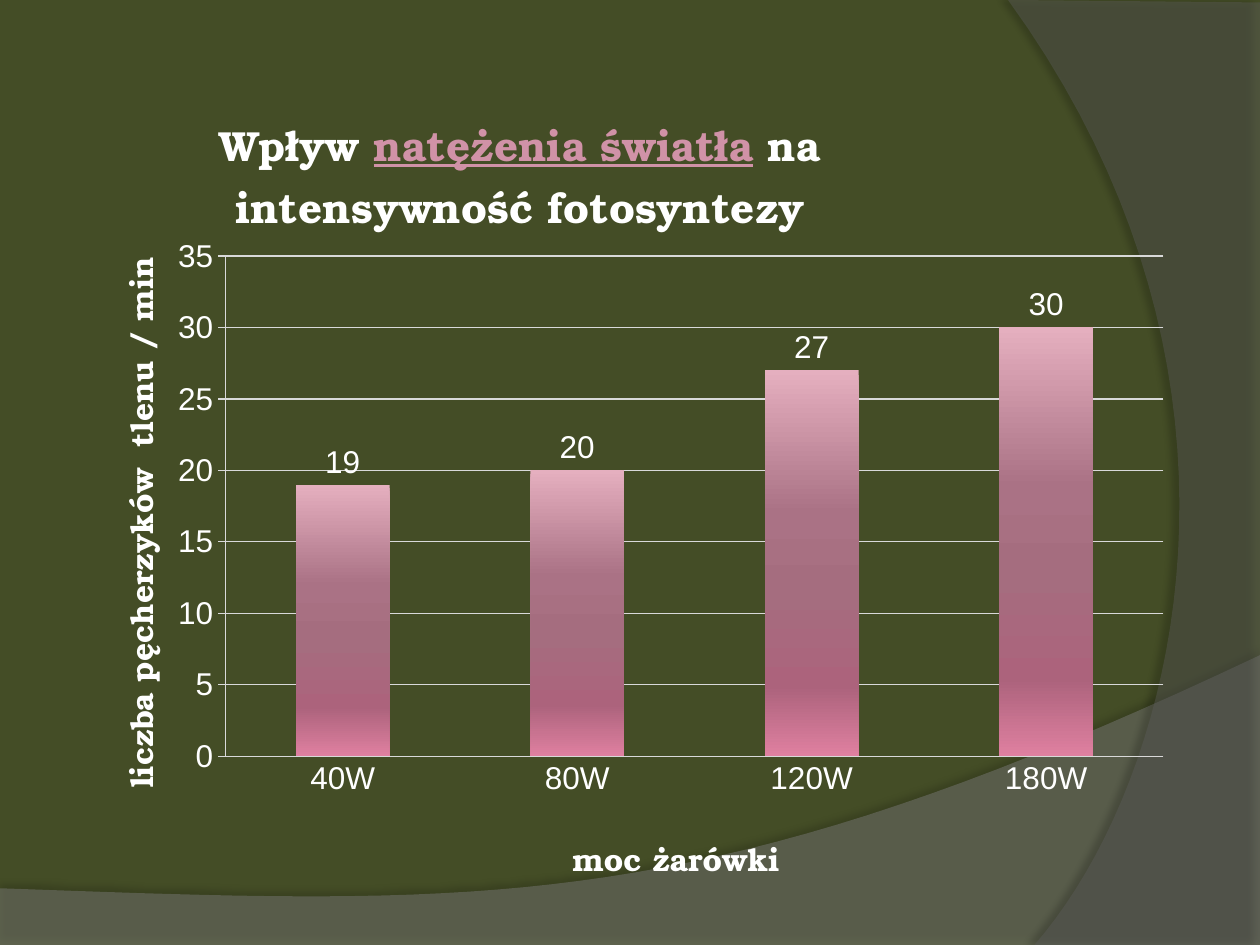
import lxml.etree
import pptx
import pptx.chart.data
import pptx.dml.color
import pptx.enum.chart
import pptx.oxml.ns
import pptx.oxml.xmlchemy
import pptx.util

Inches = pptx.util.Inches
Pt = pptx.util.Pt
qn = pptx.oxml.ns.qn

COLORS = {
    "back": "444D26", "wave": "7F7F7F", "arc": "5E5E5E", "shade": "000000",
    "text": "FFFFFF", "pink": "D092A7", "grid": "D9D9D9",
}
# Bar gradient, from top to base: percent and colour
STOPS = [(0, "E5AFBF"), (37, "AA7285"), (57, "A56D7F"),
         (82, "AC637C"), (100, "DF80A0")]


def rgb(name):
    return pptx.dml.color.RGBColor.from_string(COLORS[name])


def add_text(para, words, size=18, font="TeX Gyre Bonum", color="text",
             bold=True, line=False):
    run = para.add_run()
    run.text = words
    run.font.size = Pt(size)
    run.font.name = font
    run.font.bold = bold
    run.font.underline = line
    run.font.color.rgb = rgb(color)


def add_node(parent, tag, **values):
    node = lxml.etree.SubElement(parent, qn(tag))
    for key, value in values.items():
        node.set(key, str(value))
    return node


def make_place(left, top, wide=None, high=None):
    """Return a manual chart layout given in parts of the chart's size."""
    place = pptx.oxml.xmlchemy.OxmlElement("c:layout")
    manual = add_node(place, "c:manualLayout")
    if wide:
        add_node(manual, "c:layoutTarget", val="inner")
    add_node(manual, "c:xMode", val="edge")
    add_node(manual, "c:yMode", val="edge")
    for tag, value in zip("xywh", (left, top, wide, high)):
        if value is not None:
            add_node(manual, "c:" + tag, val=value)
    return place


def bend(start, pull, push, end, steps=40):
    """Return points along a cubic curve."""
    points = []
    for step in range(steps + 1):
        t = step / steps
        parts = ((1 - t) ** 3, 3 * t * (1 - t) ** 2, 3 * t * t * (1 - t), t ** 3)
        points.append(tuple(
            sum(part * spot[axis] for part, spot in zip(parts, (start, pull, push, end)))
            for axis in (0, 1)))
    return points


class Deck:
    def __init__(self):
        self.show = pptx.Presentation()
        self.show.slide_width = Inches(10)
        self.show.slide_height = Inches(7.5)
        self.slide = self.show.slides.add_slide(self.show.slide_layouts[6])
        fill = self.slide.background.fill
        fill.solid()
        fill.fore_color.rgb = rgb("back")

    def add_form(self, points, color, alpha, shade, gap, angle):
        """Draw a clear outline; alpha and shade are percents, gap is in points."""
        spots = [(Inches(x), Inches(y)) for x, y in points]
        build = self.slide.shapes.build_freeform(*spots[0])
        build.add_line_segments(spots[1:], close=True)
        shape = build.convert_to_shape()
        shape.line.fill.background()
        shape.fill.solid()
        shape.fill.fore_color.rgb = rgb(color)
        props = shape._element.spPr
        add_node(props.find(".//" + qn("a:srgbClr")), "a:alpha", val=alpha * 1000)
        shape.shadow.inherit = False
        glow = add_node(props.find(qn("a:effectLst")), "a:outerShdw",
                        blurRad=Pt(4), dist=Pt(gap), dir=angle * 60000)
        tint = add_node(glow, "a:srgbClr", val=COLORS["shade"])
        add_node(tint, "a:alpha", val=shade * 1000)

    def add_title(self, title, runs, place, turn=0):
        frame = title.text_frame
        for words, style in runs:
            add_text(frame.paragraphs[0], words, **style)
        frame._txBody.bodyPr.set("rot", str(turn * 60000))
        frame._txBody.bodyPr.set("vert", "horz")
        root = title._element
        for old in root.findall(qn("c:layout")):
            root.remove(old)
        root.find(qn("c:tx")).addnext(make_place(*place))

    def add_bars(self, cats, values):
        data = pptx.chart.data.CategoryChartData()
        data.categories = cats
        data.add_series("Series 1", values)
        chart = self.slide.shapes.add_chart(
            pptx.enum.chart.XL_CHART_TYPE.COLUMN_CLUSTERED,
            Inches(0.59), Inches(0.6), Inches(8.82), Inches(6.54), data).chart
        chart.has_legend = False
        chart.font.size = Pt(18)
        chart.font.name = "Arial"
        chart.font.color.rgb = rgb("text")
        area = chart._chartSpace.chart.plotArea
        for old in area.findall(qn("c:layout")):
            area.remove(old)
        area.insert(0, make_place(0.136, 0.219, 0.844, 0.607))
        plot = chart.plots[0]
        plot.gap_width = 150
        plot.vary_by_categories = False
        plot.has_data_labels = True
        labels = plot.data_labels
        labels.show_value = True
        labels.position = pptx.enum.chart.XL_LABEL_POSITION.OUTSIDE_END
        self.fill_bars(plot.series[0])
        self.set_axes(chart)
        return chart

    def fill_bars(self, series):
        fill = series.format.fill
        fill.gradient()
        blend = series._element.spPr.find(qn("a:gradFill"))
        for child in list(blend):
            blend.remove(child)
        stops = add_node(blend, "a:gsLst")
        for part, color in STOPS:
            stop = add_node(stops, "a:gs", pos=part * 1000)
            add_node(stop, "a:srgbClr", val=color)
        add_node(blend, "a:lin", ang=90 * 60000, scaled=0)

    def set_axes(self, chart):
        marks = pptx.enum.chart.XL_TICK_MARK
        cat, val = chart.category_axis, chart.value_axis
        cat.major_tick_mark = marks.NONE
        val.major_tick_mark = marks.OUTSIDE
        val.minimum_scale, val.maximum_scale, val.major_unit = 0, 35, 5
        val.has_major_gridlines = True
        for part in (cat, val, val.major_gridlines):
            part.format.line.color.rgb = rgb("grid")
            part.format.line.width = Pt(0.75)


def main():
    deck = Deck()
    wave = bend((10, 5.2), (5.59, 7.29), (3.91, 7.19), (0, 7.05))
    deck.add_form(wave + [(0, 7.5), (10, 7.5)], "wave", 45, 35, 3.5, 270)
    arc = bend((8.21, 7.5), (9.35, 6.19), (10.18, 3), (8, 0))
    deck.add_form(arc + [(10, 0.02), (10, 7.5)], "arc", 40, 45, 4, 180)

    chart = deck.add_bars(["40W", "80W", "120W", "180W"], [19, 20, 27, 30])
    big = {"size": 24}
    deck.add_title(chart.chart_title, [
        ("Wpływ ", big),
        ("natężenia światła", {"size": 24, "color": "pink", "line": True}),
        (" na intensywność fotosyntezy", big)], (0.127, 0.038))
    deck.add_title(chart.category_axis.axis_title,
                   [("moc żarówki", {})], (0.443, 0.91))
    deck.add_title(chart.value_axis.axis_title,
                   [("liczba pęcherzyków  tlenu / min", {})], (0.03, 0.213), -90)
    deck.show.save("out.pptx")


if __name__ == "__main__":
    main()
